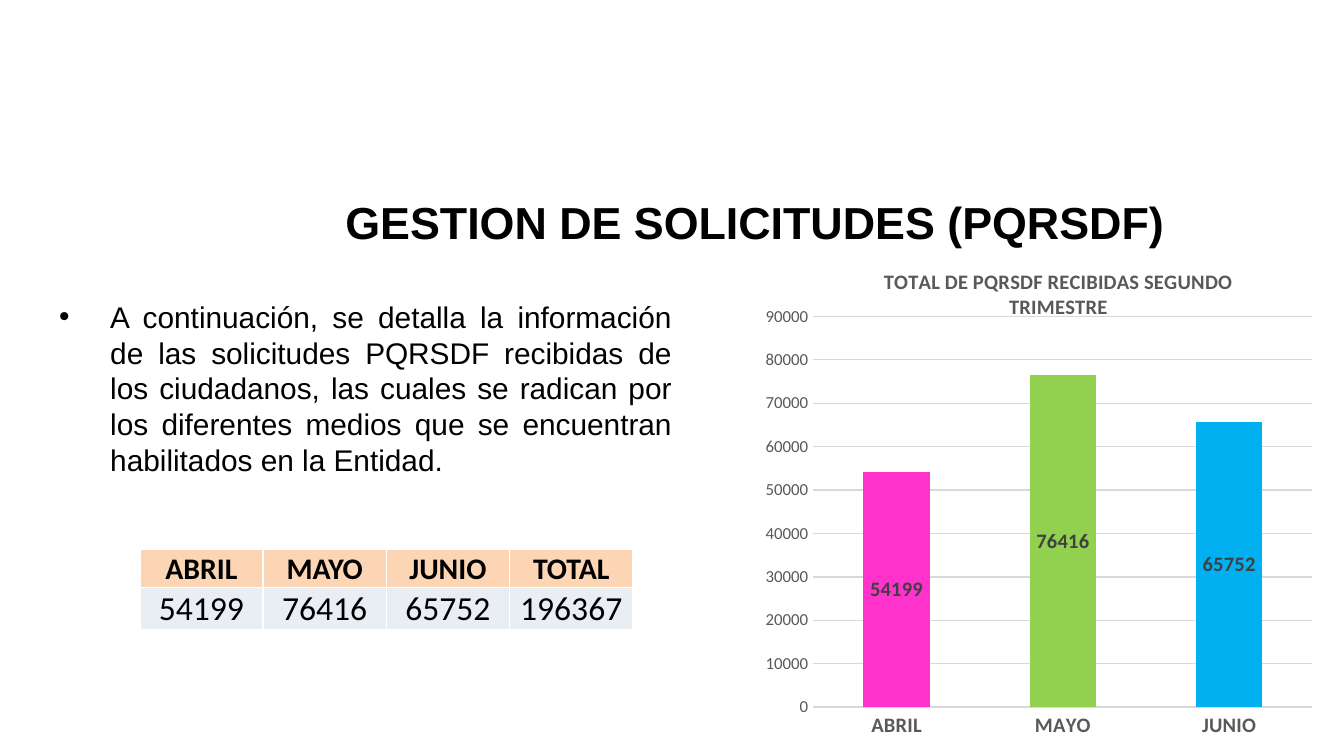
from lxml import etree
from pptx import Presentation
from pptx import util as u
from pptx.chart.data import CategoryChartData
from pptx.dml.color import RGBColor
from pptx.enum import chart as ch
from pptx.enum import text
from pptx.oxml import parse_xml
from pptx.oxml.ns import nsdecls, qn

MONTHS = ["ABRIL", "MAYO", "JUNIO"]
REQUESTS = [54199, 76416, 65752]
MONTH_COLORS = ["FF33CC", "92D050", "00B0F0"]


def paint(color_format, color):
    color_format.rgb = RGBColor.from_string(color)


def fill(target, color):
    target.fill.solid()
    paint(target.fill.fore_color, color)


def style(font, name, size, color, bold=False):
    font.name, font.size, font.bold = name, u.Pt(size), bold
    paint(font.color, color)


def place(part, box):
    part.left, part.top, part.width, part.height = map(u.Inches, box)


def write(paragraph, words, align, *look):
    paragraph.alignment = align
    run = paragraph.add_run()
    run.text = words
    style(run.font, *look)


def add_heading(slide, box):
    heading = slide.shapes.title
    place(heading, box)
    frame = heading.text_frame
    frame.auto_size = text.MSO_AUTO_SIZE.NONE
    frame.vertical_anchor = text.MSO_ANCHOR.MIDDLE
    write(frame.paragraphs[0], "GESTION DE SOLICITUDES (PQRSDF)",
          text.PP_ALIGN.LEFT, "Arial", 24, "000000", True)


def add_introduction(slide, box):
    introduction = slide.placeholders[1]
    place(introduction, box)
    frame = introduction.text_frame
    frame.auto_size = text.MSO_AUTO_SIZE.NONE
    paragraph = frame.paragraphs[0]
    paragraph.space_before = u.Pt(0)
    properties = paragraph._p.get_or_add_pPr()
    properties.set("marL", str(u.Inches(0.38)))
    properties.set("indent", str(-u.Inches(0.38)))
    etree.SubElement(properties, qn("a:buChar")).set("char", "•")
    write(paragraph,
          "A continuación, se detalla la información de las solicitudes PQRSDF "
          "recibidas de los ciudadanos, las cuales se radican por los diferentes "
          "medios que se encuentran habilitados en la Entidad.",
          text.PP_ALIGN.JUSTIFY, "Arial", 16, "000000")


def border_cell(cell, color, width):
    properties = cell._tc.get_or_add_tcPr()
    for position, side in enumerate(("lnL", "lnR", "lnT", "lnB")):
        properties.insert(position, parse_xml(
            f'<a:{side} {nsdecls("a")} w="{u.Pt(width)}"><a:solidFill>'
            f'<a:srgbClr val="{color}"/></a:solidFill></a:{side}>'))


def add_totals(slide, box):
    rows = [
        (MONTHS + ["TOTAL"], 0.28, "FCD5B5", text.MSO_ANCHOR.BOTTOM, 16, True),
        (REQUESTS + [sum(REQUESTS)], 0.31, "E9EDF4", text.MSO_ANCHOR.MIDDLE, 18, False),
    ]
    totals = slide.shapes.add_table(len(rows), len(MONTHS) + 1, *map(u.Inches, box)).table
    for row, (values, height, color, anchor, size, bold) in enumerate(rows):
        totals.rows[row].height = u.Inches(height)
        for column, value in enumerate(values):
            cell = totals.cell(row, column)
            cell.margin_left = cell.margin_right = cell.margin_top = u.Inches(0.01)
            cell.margin_bottom = 0
            cell.vertical_anchor = anchor
            fill(cell, color)
            border_cell(cell, "FFFFFF", 1)
            write(cell.text_frame.paragraphs[0], str(value),
                  text.PP_ALIGN.CENTER, "Calibri", size, "000000", bold)


def set_layout(element, x, y, width=None, height=None):
    for old in element.findall(qn("c:layout")):
        element.remove(old)
    settings = [("xMode", "edge"), ("yMode", "edge"), ("x", x), ("y", y)]
    if width:
        settings = [("layoutTarget", "inner")] + settings + [("w", width), ("h", height)]
    layout = etree.Element(qn("c:layout"))
    manual = etree.SubElement(layout, qn("c:manualLayout"))
    for tag, value in settings:
        etree.SubElement(manual, qn(f"c:{tag}")).set("val", str(value))
    words = element.find(qn("c:tx"))
    element.insert(0 if words is None else 1, layout)


def add_monthly_chart(slide, box):
    data = CategoryChartData()
    data.categories = MONTHS
    data.add_series("Series 1", REQUESTS)
    chart = slide.shapes.add_chart(
        ch.XL_CHART_TYPE.COLUMN_STACKED, *map(u.Inches, box), data).chart
    style(chart.font, "Calibri", 10, "000000")
    chart.has_legend = False

    chart.has_title = True
    title = chart.chart_title
    write(title.text_frame.paragraphs[0], "TOTAL DE PQRSDF RECIBIDAS SEGUNDO TRIMESTRE",
          text.PP_ALIGN.CENTER, "Calibri", 11, "595959", True)
    title.include_in_layout = True
    set_layout(title._element, 0.22, 0)
    set_layout(chart._chartSpace.chart.plotArea, 0.1, 0.11, 0.9, 0.81)

    for axis, size, bold in ((chart.category_axis, 11, True), (chart.value_axis, 9, False)):
        axis.major_tick_mark = axis.minor_tick_mark = ch.XL_TICK_MARK.NONE
        axis.format.line.fill.background()
        style(axis.tick_labels.font, "Calibri", size, "595959", bold)
    amounts = chart.value_axis
    amounts.minimum_scale, amounts.maximum_scale, amounts.major_unit = 0, 90000, 10000
    grid = amounts.major_gridlines.format.line
    grid.width = u.Pt(0.75)
    paint(grid.color, "D9D9D9")

    plot = chart.plots[0]
    plot.vary_by_categories = False
    plot.gap_width, plot.overlap = 150, 100
    months = plot.series[0]
    fill(months.format, "4F81BD")
    for index, color in enumerate(MONTH_COLORS):
        fill(months.points[index].format, color)
    labels = months.data_labels
    labels.show_value = True
    labels.position = ch.XL_LABEL_POSITION.CENTER
    style(labels.font, "Calibri", 11, "404040", True)


def main():
    deck = Presentation()
    deck.slide_width = u.Inches(10)
    deck.slide_height = deck.slide_width * 9 // 16
    slide = deck.slides.add_slide(deck.slide_layouts[1])
    add_heading(slide, (2.47, 1.18, 7.36, 0.94))
    add_introduction(slide, (0.34, 2.17, 4.76, 1.51))
    add_totals(slide, (1.04, 4.09, 3.67, 0.59))
    add_monthly_chart(slide, (5.64, 1.96, 4.13, 3.59))
    deck.save("out.pptx")


if __name__ == "__main__":
    main()
